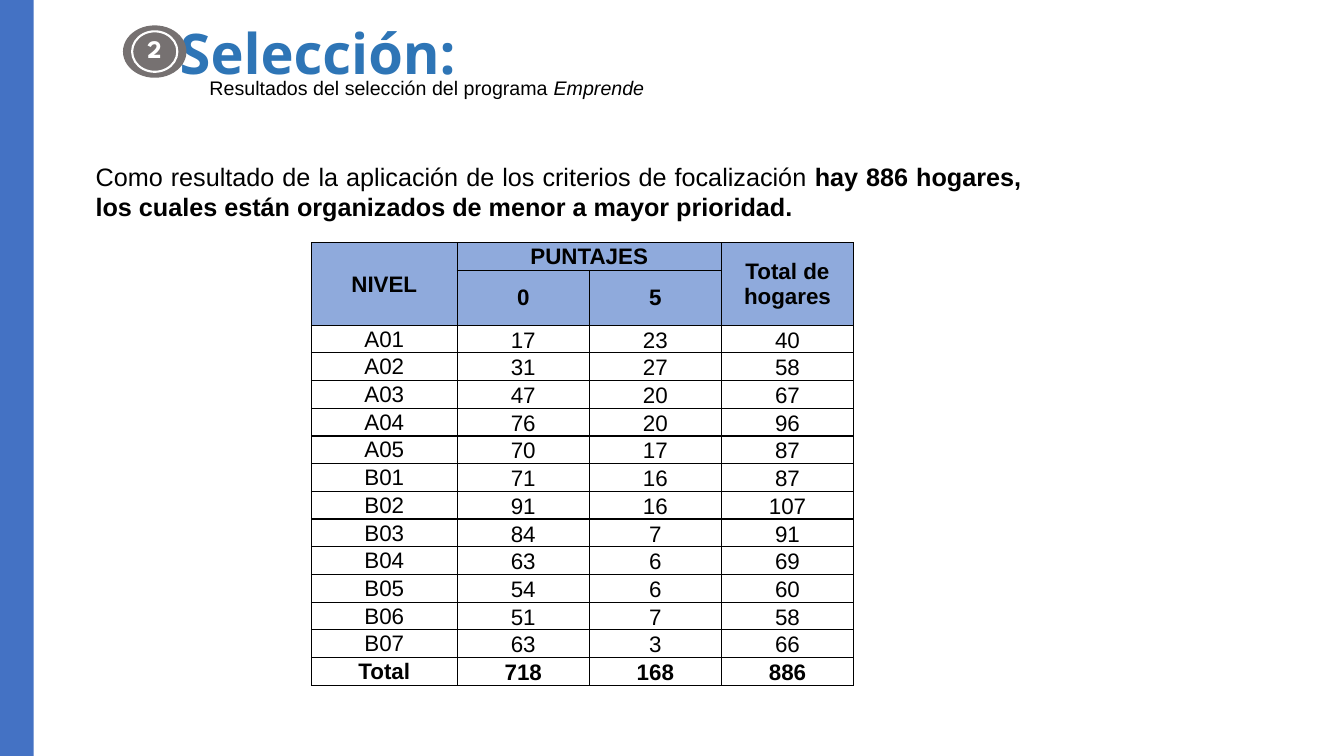
"""Builds the slide with the household selection results by level and score."""
import pptx
import pptx.dml.color
import pptx.enum.shapes
import pptx.enum.text
import pptx.oxml
import pptx.oxml.ns
import pptx.util

Cm, Pt = pptx.util.Cm, pptx.util.Pt
RGBColor = pptx.dml.color.RGBColor
ALIGN = pptx.enum.text.PP_ALIGN
ANCHOR = pptx.enum.text.MSO_ANCHOR
AUTO_SIZE = pptx.enum.text.MSO_AUTO_SIZE
SHAPE = pptx.enum.shapes.MSO_SHAPE

BLACK = RGBColor(0x00, 0x00, 0x00)
WHITE = RGBColor(0xFF, 0xFF, 0xFF)
SIDEBAR_BLUE = RGBColor(0x44, 0x72, 0xC4)
TITLE_BLUE = RGBColor(0x2E, 0x75, 0xB6)
BADGE_GRAY = RGBColor(0x76, 0x71, 0x71)
HEADER_BLUE = RGBColor(0x8F, 0xAA, 0xDC)


def write(paragraph, align, font_name, size, color, runs):
    """Fill a paragraph with (text, extra format) runs."""
    paragraph.alignment = align
    for text, extra in runs:
        run = paragraph.add_run()
        run.text = text
        for attribute, value in {"name": font_name, "size": Pt(size), **extra}.items():
            setattr(run.font, attribute, value)
        run.font.color.rgb = color


def add_text(shapes, box, align, font_name, size, color, runs):
    """Add a wrapping text box that fits its text."""
    frame = shapes.add_textbox(*map(Cm, box)).text_frame
    frame.word_wrap = True
    frame.auto_size = AUTO_SIZE.SHAPE_TO_FIT_TEXT
    write(frame.paragraphs[0], align, font_name, size, color, runs)
    return frame


presentation = pptx.Presentation()
presentation.slide_width = Cm(33.87)
presentation.slide_height = Cm(19.05)
slide = presentation.slides.add_slide(presentation.slide_layouts[6])

sidebar = slide.shapes.add_shape(SHAPE.RECTANGLE, Cm(-0.02), Cm(0), Cm(0.87), Cm(19.05))
sidebar.shadow.inherit = False
sidebar.fill.solid()
sidebar.fill.fore_color.rgb = SIDEBAR_BLUE
sidebar.line.fill.background()

add_text(slide.shapes, (2.16, 3.94, 23.83, 4.11), ALIGN.JUSTIFY, "Arial", 18, BLACK, [
    ("Como resultado de la aplicación de los criterios de focalización ", {}),
    ("hay 886 hogares, los cuales están organizados de menor a mayor prioridad.", {"bold": True}),
])

title = add_text(slide.shapes, (1.37, 0.43, 13.64, 1.96), ALIGN.CENTER, "Open Sans", 40,
                 TITLE_BLUE, [("Selección: ", {"bold": True})])
title.auto_size = AUTO_SIZE.NONE
title.vertical_anchor = ANCHOR.MIDDLE
title.paragraphs[0].line_spacing = 0.9

badge = slide.shapes.add_group_shape()
disc = badge.shapes.add_shape(SHAPE.OVAL, Cm(3.1), Cm(0.64), Cm(1.6), Cm(1.32))
disc.shadow.inherit = False
disc.fill.solid()
disc.fill.fore_color.rgb = BADGE_GRAY
disc.line.fill.background()
ring = badge.shapes.add_shape(SHAPE.OVAL, Cm(3.33), Cm(0.79), Cm(1.14), Cm(1.02))
ring.shadow.inherit = False
ring.fill.background()
ring.line.color.rgb = WHITE
ring.line.width = Pt(1.5)
add_text(badge.shapes, (2.97, 0.71, 1.85, 1.83), ALIGN.CENTER, "League Spartan", 18, WHITE,
         [("2", {"bold": True})])

add_text(slide.shapes, (5.03, 1.8, 17.63, 0.86), ALIGN.LEFT, "Arial", 14, BLACK, [
    ("Resultados del selección del programa ", {}),
    ("Emprende", {"italic": True}),
])

HEADER_ROWS = 2
households = [
    ("NIVEL", "PUNTAJES", "", "Total de hogares"),
    ("", "0", "5", ""),
    ("A01", 17, 23, 40),
    ("A02", 31, 27, 58),
    ("A03", 47, 20, 67),
    ("A04", 76, 20, 96),
    ("A05", 70, 17, 87),
    ("B01", 71, 16, 87),
    ("B02", 91, 16, 107),
    ("B03", 84, 7, 91),
    ("B04", 63, 6, 69),
    ("B05", 54, 6, 60),
    ("B06", 51, 7, 58),
    ("B07", 63, 3, 66),
    ("Total", 718, 168, 886),
]
column_widths = (3.67, 3.33, 3.33, 3.33)
row_height = 0.66
scores = slide.shapes.add_table(
    len(households), len(column_widths), Cm(7.85), Cm(6.12),
    Cm(sum(column_widths)), Cm(row_height * len(households))).table
scores.first_row = scores.horz_banding = False
for column, width in zip(scores.columns, column_widths):
    column.width = Cm(width)
for row in scores.rows:
    row.height = Cm(row_height)

cell_margins = {"margin_left": Cm(0.02), "margin_right": Cm(0.02),
                "margin_top": Cm(0.02), "margin_bottom": Cm(0)}
for row_index, values in enumerate(households):
    is_header = row_index < HEADER_ROWS
    is_bold = is_header or row_index == len(households) - 1
    for column_index, value in enumerate(values):
        cell = scores.cell(row_index, column_index)
        for attribute, margin in cell_margins.items():
            setattr(cell, attribute, margin)
        cell.vertical_anchor = ANCHOR.MIDDLE if is_header or column_index == 0 else ANCHOR.BOTTOM
        for side in ("lnL", "lnR", "lnT", "lnB"):
            cell._tc.get_or_add_tcPr().append(pptx.oxml.parse_xml(
                f'<a:{side} {pptx.oxml.ns.nsdecls("a")} w="{Pt(1)}"><a:solidFill>'
                f'<a:srgbClr val="{BLACK}"/></a:solidFill></a:{side}>'))
        if is_header:
            cell.fill.solid()
            cell.fill.fore_color.rgb = HEADER_BLUE
        else:
            cell.fill.background()
        if value != "":
            write(cell.text_frame.paragraphs[0], ALIGN.CENTER, "Arial", 16, BLACK,
                  [(str(value), {"bold": is_bold})])

for first, last in (((0, 0), (1, 0)), ((0, 1), (0, 2)), ((0, 3), (1, 3))):
    scores.cell(*first).merge(scores.cell(*last))

presentation.save("out.pptx")
